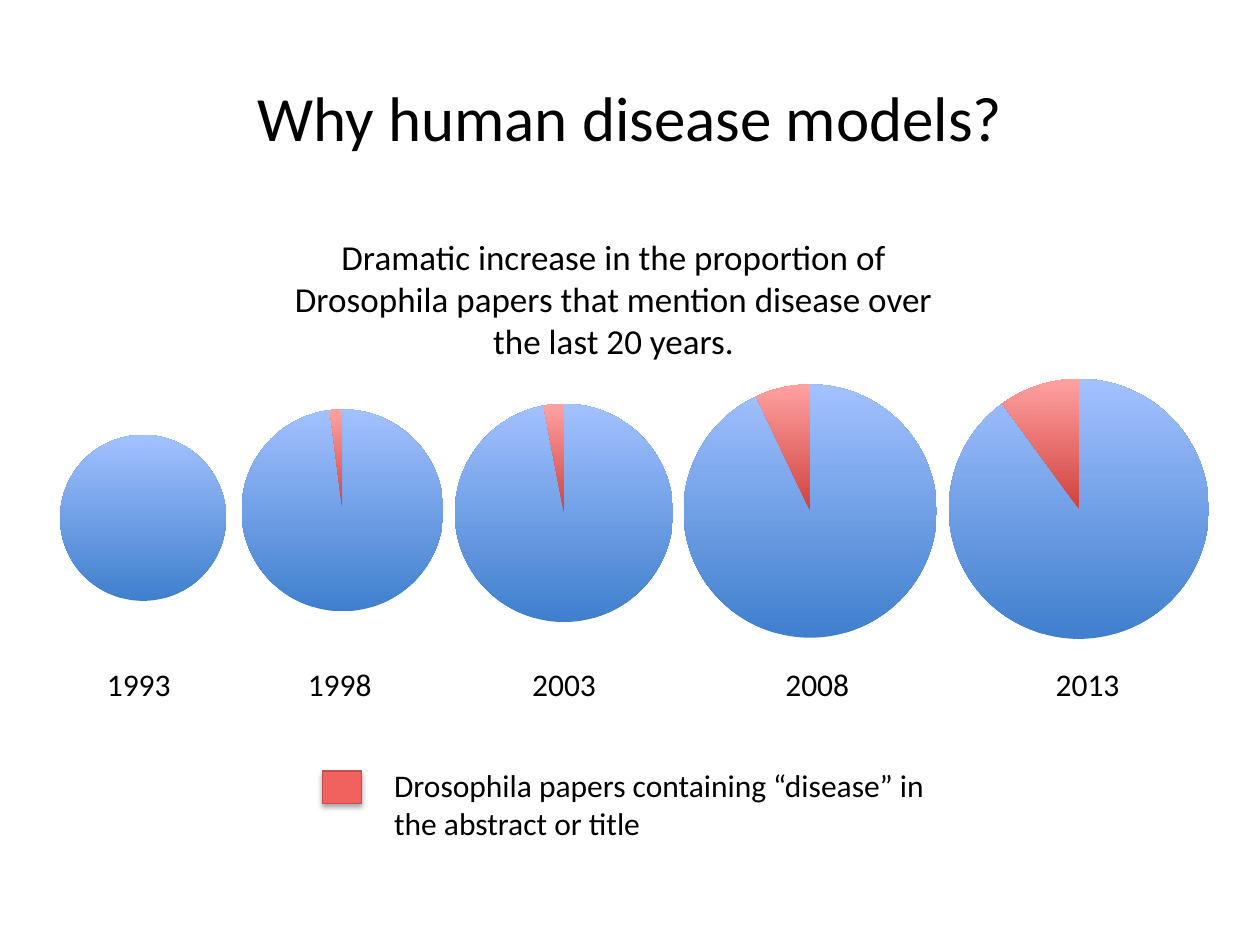
from lxml import etree
from pptx import Presentation
from pptx import util as u
from pptx.chart.data import CategoryChartData
from pptx.dml.color import RGBColor
from pptx.enum import chart as charts, shapes, text
from pptx.oxml import parse_xml
from pptx.oxml.ns import nsdecls, qn

# The slide is a grid of 100 columns by 75 rows
COLUMNS, ROWS = 100, 75
SLIDE_WIDTH, SLIDE_HEIGHT = u.Inches(10), u.Inches(7.5)
FONT = "Calibri"
COLORS = {
    "text": "000000",
    "key": "F1625F",
    "key_line": "C0504D",
    "other_bottom": "3F7FCD",
    "other_top": "A3C1FF",
    "disease_bottom": "D0413D",
    "disease_top": "FFA2A1",
}
SLICES = ("other", "disease")

# Year, label column, disease share in %, chart box, plot area as shares of the box
PIES = [
    ("1993", 7.5, 0, (4.45, 33.3, 13.5, 20), (0.024, 0.025, 0.976, 0.731)),
    ("1998", 23.45, 2, (16.65, 30.7, 22.3, 20.2), (0.113, 0.082, 0.719, 0.807)),
    ("2003", 41.25, 3, (27.8, 28.55, 38.6, 22.3), (0.215, 0.151, 0.449, 0.789)),
    ("2008", 61.35, 7, (43.4, 29.8, 38.6, 22.3), (0.281, 0.026, 0.521, 0.914)),
    ("2013", 82.8, 10, (74.25, 26.15, 28.4, 27.1), (0.037, 0.139, 0.727, 0.773)),
]


def color(name):
    return RGBColor.from_string(COLORS[name])


def place(box):
    """Turn left, top, width, height in grid cells into slide lengths."""
    column, row = SLIDE_WIDTH / COLUMNS, SLIDE_HEIGHT / ROWS
    return [round(cells * unit) for cells, unit in zip(box, (column, row) * 2)]


def set_font(font, size):
    for name, value in {"name": FONT, "size": u.Pt(size)}.items():
        setattr(font, name, value)
    font.color.rgb = color("text")


def add_text(slide, box, words, size, align="LEFT", anchor="TOP"):
    frame = slide.shapes.add_textbox(*place(box)).text_frame
    frame.word_wrap = True
    frame.vertical_anchor = getattr(text.MSO_ANCHOR, anchor)
    paragraph = frame.paragraphs[0]
    paragraph.alignment = getattr(text.PP_ALIGN, align)
    run = paragraph.add_run()
    run.text = words
    set_font(run.font, size)


def set_plot_layout(chart, plot_box):
    plot_area = chart._chartSpace.find(".//" + qn("c:plotArea"))
    for old in plot_area.findall(qn("c:layout")):
        plot_area.remove(old)
    layout = etree.Element(qn("c:layout"))
    manual = etree.SubElement(layout, qn("c:manualLayout"))
    settings = [("layoutTarget", "inner"), ("xMode", "edge"), ("yMode", "edge")]
    for tag, value in settings + list(zip("xywh", plot_box)):
        etree.SubElement(manual, qn("c:" + tag)).set("val", str(value))
    plot_area.insert(0, layout)


def clear_background(chart):
    properties = parse_xml(
        f"<c:spPr {nsdecls('c', 'a')}><a:noFill/><a:ln><a:noFill/></a:ln></c:spPr>")
    chart._chartSpace.find(qn("c:chart")).addnext(properties)


def add_pie(slide, box, share, plot_box):
    data = CategoryChartData()
    data.categories = ["1", "2"]
    data.add_series("Series 1", (100 - share, share))
    chart = slide.shapes.add_chart(
        charts.XL_CHART_TYPE.PIE, *place(box), data).chart
    for name in ("has_legend", "has_title"):
        setattr(chart, name, False)
    set_font(chart.font, 10)
    set_plot_layout(chart, plot_box)
    clear_background(chart)
    plot = chart.plots[0]
    plot.vary_by_categories = True
    # Each slice shades from dark at the bottom to light at the top
    for index, name in enumerate(SLICES):
        slice_format = plot.series[0].points[index].format
        slice_format.line.fill.background()
        fill = slice_format.fill
        fill.gradient()
        fill.gradient_angle = 90
        for stop, end in zip(fill.gradient_stops, ("bottom", "top")):
            stop.color.rgb = color(f"{name}_{end}")


def add_heading(slide, box):
    left, top, width, height = box
    add_text(slide, (left, top, width, 12.5), "Why human disease models?",
             36, "CENTER", "MIDDLE")
    add_text(slide, (left + 15.3, top + 15.2, 56.8, height - 15.2),
             "Dramatic increase in the proportion of Drosophila papers that "
             "mention disease over the last 20 years.", 20, "CENTER")


def add_pie_row(slide, label_row):
    for year, column, share, box, plot_box in reversed(PIES):
        add_pie(slide, box, share, plot_box)
        add_text(slide, (column, label_row, 7.4, 3.7), year, 18)


def add_key(slide, box):
    left, top, width, height = box
    swatch = slide.shapes.add_shape(
        shapes.MSO_SHAPE.RECTANGLE, *place((left, top + 0.9, 3.1, 2.55)))
    swatch.fill.solid()
    swatch.fill.fore_color.rgb = color("key")
    swatch.line.color.rgb = color("key_line")
    swatch.line.width = u.Pt(0.75)
    swatch.shadow.inherit = False
    # Soft shadow below the swatch
    effects = swatch._element.spPr.find(qn("a:effectLst"))
    effects.append(parse_xml(
        f'<a:outerShdw {nsdecls("a")} blurRad="{u.Pt(3.1)}" dist="{u.Pt(1.8)}" '
        f'dir="5400000" rotWithShape="0"><a:srgbClr val="{COLORS["text"]}">'
        '<a:alpha val="35000"/></a:srgbClr></a:outerShdw>'))
    add_text(slide, (left + 4.7, top, width - 4.7, height),
             "Drosophila papers containing “disease” in the abstract or title", 18)


def main():
    presentation = Presentation()
    presentation.slide_width = SLIDE_WIDTH
    presentation.slide_height = SLIDE_HEIGHT
    slide = presentation.slides.add_slide(presentation.slide_layouts[6])
    add_pie_row(slide, 52.3)
    add_key(slide, (25.6, 60.3, 52.1, 6.4))
    add_heading(slide, (5, 3, 90, 26.3))
    presentation.save("out.pptx")


if __name__ == "__main__":
    main()
